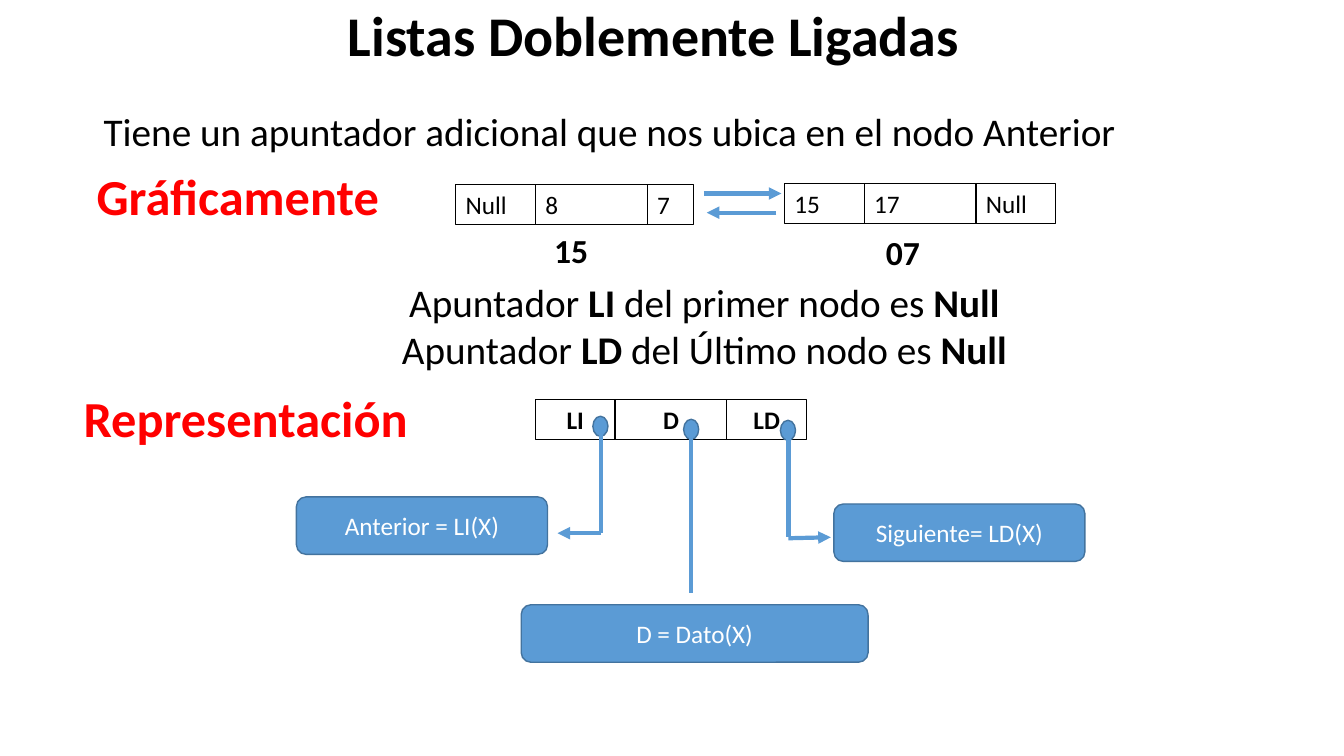
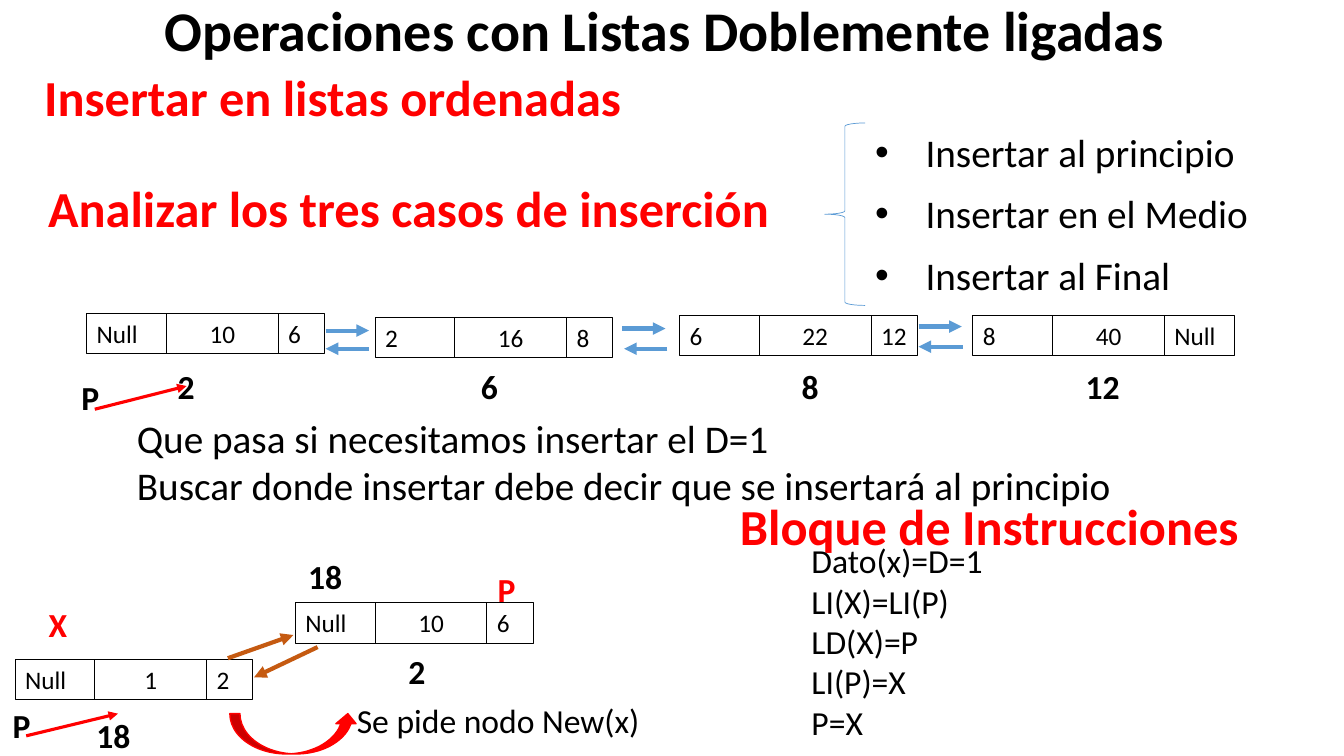
from lxml import etree
from pptx import Presentation
from pptx import util as u
from pptx.dml.color import RGBColor
from pptx.enum import shapes, text
from pptx.oxml.ns import qn

FONT = "Calibri"
COLORS = {"black": "000000", "red": "FF0000", "white": "FFFFFF",
          "blue": "5B9BD5", "edge": "43739E", "brown": "C55A11"}
LEFT, CENTER = text.PP_ALIGN.LEFT, text.PP_ALIGN.CENTER
POINTER, DATA, CELL_HEIGHT = 0.79, 1.11, 0.4

LINKED = {
    "title": ("Listas Doblemente Ligadas", (3.35, -0.04, 7.01, 0.77)),
    "headings": [
        ("Gráficamente", (0.86, 1.59, 3.05, 0.71)),
        ("Representación", (0.73, 3.79, 4.45, 0.71)),
    ],
    "texts": [
        (["Tiene un apuntador adicional que nos ubica en el nodo Anterior"],
         (0.93, 1.02, 12.39, 0.57), 28, LEFT),
        (["Apuntador *LI *del primer nodo es *Null*",
          "Apuntador *LD* del Último nodo es *Null*"],
         (0.79, 2.71, 12.39, 1.04), 28, CENTER),
    ],
    "nodes": [
        (4.52, 1.83, ("Null", "8", "7"), 0.46, (LEFT, LEFT, LEFT)),
        (7.78, 1.82, ("15", "17", "Null"), 0.79, (LEFT, LEFT, LEFT)),
        (5.31, 3.96, ("*LI*", "*D*", "*LD*"), 0.79, (CENTER, CENTER, CENTER)),
    ],
    "labels": [("15", 5.31, 2.23, "black"), ("07", 8.6, 2.25, "black")],
    "arrows": [
        ((6.98, 1.92), (7.75, 1.92), "blue", 3),
        ((7.7, 2.11), (7.01, 2.11), "blue", 3),
        ((5.96, 5.29), (5.53, 5.29), "blue", 3),
        ((7.82, 5.34), (8.24, 5.33), "blue", 3),
    ],
}
DOTS = [(5.88, 4.13), (6.78, 4.16), (7.74, 4.17)]
STEMS = [(5.96, 4.25, 5.29), (6.85, 4.32, 5.88), (7.82, 4.29, 5.33)]
FIELDS = [
    ("Anterior = LI(X)", (2.94, 4.93, 2.49, 0.57)),
    ("D = Dato(X)", (5.17, 6, 3.44, 0.57)),
    ("Siguiente= LD(X)", (8.27, 5, 2.49, 0.57)),
]

MIXED = (LEFT, CENTER, LEFT)
INSERTION = {
    "title": ("Operaciones con Listas Doblemente ligadas", (1.53, -0.09, 10.94, 0.77)),
    "headings": [
        ("Insertar en listas ordenadas", (0.34, 0.61, 6.68, 0.71)),
        ("Analizar los tres casos de inserción", (0.38, 1.71, 10.03, 0.71)),
        ("Bloque de Instrucciones", (7.24, 4.86, 6.68, 0.71)),
    ],
    "texts": [
        (["Que pasa si necesitamos insertar el D=1",
          "Buscar donde insertar debe decir que se insertará al principio"],
         (1.26, 4.06, 11.24, 1.04), 28, LEFT),
        (["Se pide nodo New(x)"], (3.44, 6.89, 3.68, 0.5), 24, LEFT),
        (["Dato(x)=D=1", "LI(X)=LI(P)", "LD(X)=P", "LI(P)=X", "P=X"],
         (7.95, 5.31, 2, 2.12), 24, LEFT),
    ],
    "nodes": [
        (0.86, 3.11, ("Null", "10", "6"), 0.46, MIXED),
        (3.72, 3.15, ("2", "16", "8"), 0.46, MIXED),
        (6.74, 3.13, ("6", "22", "12"), 0.46, MIXED),
        (9.65, 3.13, ("8", "40", "Null"), 0.69, MIXED),
        (2.93, 5.98, ("Null", "10", "6"), 0.46, MIXED),
        (0.15, 6.54, ("Null", "1", "2"), 0.46, MIXED),
    ],
    "labels": [
        ("2", 1.49, 3.58, "black"), ("6", 4.5, 3.58, "black"),
        ("8", 7.68, 3.58, "black"), ("12", 10.58, 3.58, "black"),
        ("P", 0.54, 3.69, "black"), ("2", 3.78, 6.41, "black"),
        ("18", 0.77, 7.04, "black"), ("18", 2.87, 5.47, "black"),
        ("X", 0.22, 5.94, "red"), ("P", 4.67, 5.59, "red"),
        ("P", -0.14, 6.94, "black"),
    ],
    "arrows": [
        ((3.23, 3.28), (3.66, 3.28), "blue", 3),
        ((3.66, 3.46), (3.23, 3.46), "blue", 3),
        ((6.17, 3.26), (6.6, 3.26), "blue", 3),
        ((6.62, 3.46), (6.19, 3.46), "blue", 3),
        ((9.11, 3.24), (9.54, 3.24), "blue", 3),
        ((9.55, 3.44), (9.11, 3.44), "blue", 3),
        ((2.26, 6.53), (2.91, 6.3), "brown", 3),
        ((3.15, 6.42), (2.52, 6.72), "brown", 3),
        ((0.94, 4.06), (1.85, 3.83), "red", 2.25),
        ((0.26, 7.3), (1.17, 7.08), "red", 2.25),
    ],
}
CASES = ["Insertar al principio", "Insertar en el Medio", "Insertar al Final"]
CASES_AREA = (8.58, 1.22, 4.4, 1.81)


def rgb(name):
    return RGBColor.from_string(COLORS[name])


def inches(values):
    return [u.Inches(value) for value in values]


def place(box, area):
    box.left, box.top, box.width, box.height = inches(area)


def write(box, lines, size, color="black", align=LEFT, bold=False,
          anchor=text.MSO_ANCHOR.TOP):
    frame = box.text_frame
    frame.word_wrap = True
    frame.auto_size = text.MSO_AUTO_SIZE.NONE
    frame.vertical_anchor = anchor
    for index, line in enumerate(lines):
        para = frame.paragraphs[0] if index == 0 else frame.add_paragraph()
        para.alignment = align
        para.space_before = u.Pt(0)
        para.font.name, para.font.size = FONT, u.Pt(size)
        para.font.bold = bold
        para.font.color.rgb = rgb(color)
        for part, words in enumerate(line.split("*")):
            if words:
                span = para.add_run()
                span.text = words
                if part % 2:
                    span.font.bold = True


def add_text(slide, lines, area, size, **style):
    write(slide.shapes.add_textbox(*inches(area)), lines, size, **style)


def add_shape(slide, kind, area, fill=None, line="edge", width=1):
    shape = slide.shapes.add_shape(kind, *inches(area))
    shape.shadow.inherit = False
    if fill:
        shape.fill.solid()
        shape.fill.fore_color.rgb = rgb(fill)
    else:
        shape.fill.background()
    shape.line.color.rgb = rgb(line)
    shape.line.width = u.Pt(width)
    return shape


def add_line(slide, start, end, color="blue", width=3, arrow=False):
    line = slide.shapes.add_connector(
        shapes.MSO_CONNECTOR.STRAIGHT, *inches(start + end))
    line.line.color.rgb = rgb(color)
    line.line.width = u.Pt(width)
    if arrow:
        etree.SubElement(line.line._get_or_add_ln(), qn("a:tailEnd"), type="triangle")
    etree.SubElement(line._element.spPr, qn("a:effectLst"))


def add_node(slide, left, top, values, last_width, aligns):
    for value, width, align in zip(values, (POINTER, DATA, last_width), aligns):
        cell = add_shape(slide, shapes.MSO_SHAPE.RECTANGLE,
                         (left, top, width, CELL_HEIGHT), line="black", width=0.75)
        write(cell, [value], 18, align=align)
        if align == LEFT:
            cell.text_frame.margin_right = 0
        left += width


def add_page(deck, layout, content):
    slide = deck.slides.add_slide(deck.slide_layouts[layout])
    title, area = content["title"]
    place(slide.shapes.title, area)
    write(slide.shapes.title, [title], 40, bold=True)
    for heading, area in content["headings"]:
        add_text(slide, [heading], area, 36, color="red", bold=True)
    for lines, area, size, align in content["texts"]:
        add_text(slide, lines, area, size, align=align)
    for node in content["nodes"]:
        add_node(slide, *node)
    for label, left, top, color in content["labels"]:
        add_text(slide, [label], (left, top, 0.71, 0.5), 24,
                 color=color, align=CENTER, bold=True)
    for arrow in content["arrows"]:
        add_line(slide, *arrow, arrow=True)
    return slide


def add_fields(slide):
    for left, top in DOTS:
        add_shape(slide, shapes.MSO_SHAPE.OVAL, (left, top, 0.15, 0.2), "blue")
    for left, top, bottom in STEMS:
        add_line(slide, (left, top), (left, bottom))
    for label, area in FIELDS:
        field = add_shape(slide, shapes.MSO_SHAPE.ROUNDED_RECTANGLE, area, "blue")
        write(field, [label], 18, color="white", align=CENTER,
              anchor=text.MSO_ANCHOR.MIDDLE)


def add_cases(slide):
    body = slide.placeholders[1]
    place(body, CASES_AREA)
    write(body, CASES, 28)
    for index, para in enumerate(body.text_frame.paragraphs):
        properties = para._p.get_or_add_pPr()
        properties.set("marL", str(u.Inches(0.5)))
        properties.set("indent", str(u.Inches(-0.5)))
        para.space_before = u.Pt(10.5 if index else 0)
    left, top, _, height = CASES_AREA
    add_shape(slide, shapes.MSO_SHAPE.LEFT_BRACE,
              (left - 0.4, top, 0.4, height), line="blue", width=0.5)
    add_shape(slide, shapes.MSO_SHAPE.CURVED_UP_ARROW,
              (2.28, 7.08, 1.27, 0.4), "red", "red")


def main():
    deck = Presentation()
    deck.slide_width, deck.slide_height = inches((13.33, 7.5))
    add_fields(add_page(deck, 5, LINKED))
    add_cases(add_page(deck, 1, INSERTION))
    deck.save("out.pptx")


if __name__ == "__main__":
    main()
